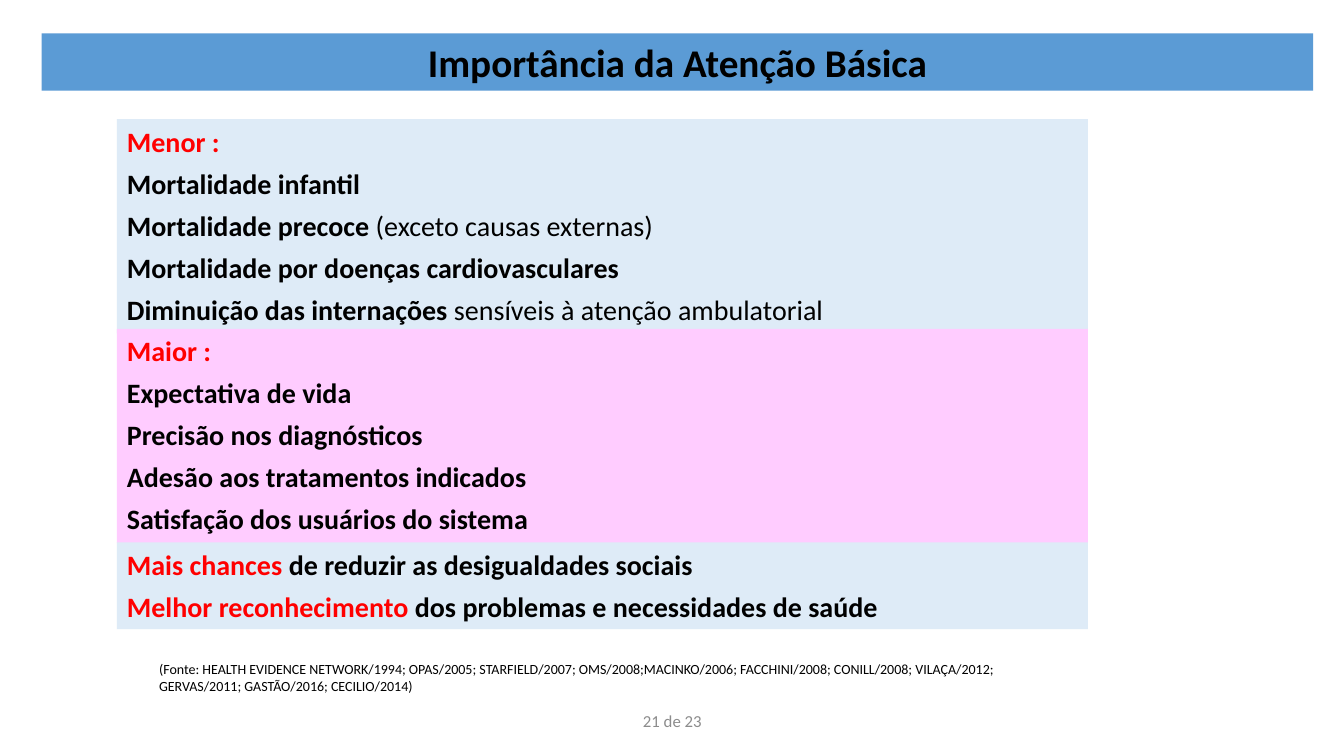
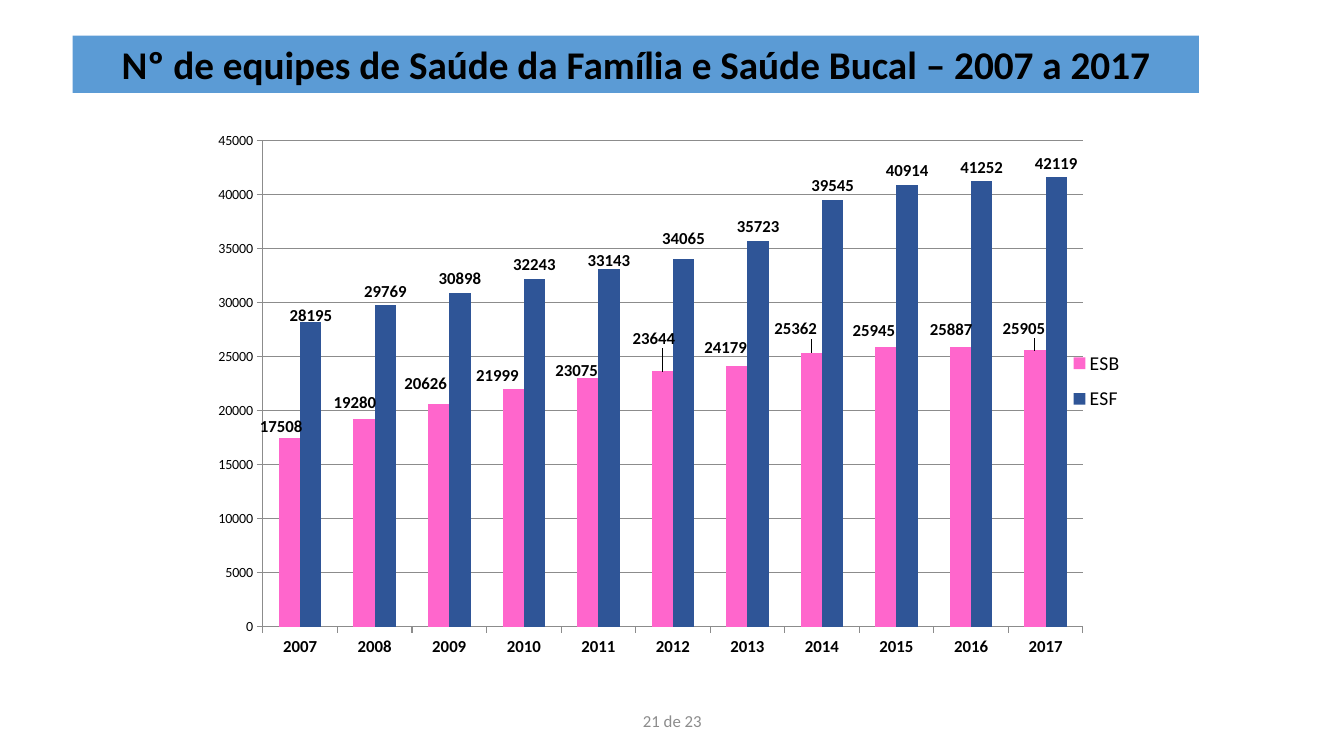
from lxml.etree import SubElement
from pptx import Presentation
from pptx.chart.data import CategoryChartData as ChartData
from pptx.dml.color import RGBColor
from pptx.enum.chart import XL_CHART_TYPE as ChartType, XL_LABEL_POSITION as LabelPos
from pptx.enum.chart import XL_LEGEND_POSITION as LegendPos, XL_TICK_MARK as TickMark
from pptx.enum.shapes import MSO_SHAPE as Shape
from pptx.enum.text import MSO_ANCHOR as Anchor, MSO_AUTO_SIZE as AutoSize, PP_ALIGN as Align
from pptx.oxml.ns import qn
from pptx.util import Inches, Pt

WIDTH, HEIGHT = Inches(13.33), Inches(7.5)
BLACK = RGBColor(0x00, 0x00, 0x00)
RED = RGBColor(0xFF, 0x00, 0x00)
GRAY = RGBColor(0x8C, 0x8C, 0x8C)
BAND_BLUE = RGBColor(0x5B, 0x9B, 0xD5)
PALE_BLUE = RGBColor(0xDE, 0xEB, 0xF7)
PALE_PINK = RGBColor(0xFF, 0xCC, 0xFF)
BAR_PINK = RGBColor(0xFF, 0x66, 0xCC)
BAR_BLUE = RGBColor(0x2F, 0x55, 0x97)

TITLE = {"size": Pt(28), "bold": True}
STRONG = {"size": Pt(20), "bold": True}
ALERT = {**STRONG, "color": RED}
PLAIN = {"size": Pt(20), "bold": False}
SOURCE = {"size": Pt(10)}
FOOTER = {"size": Pt(12), "color": GRAY}
CHART_TEXT = {"size": Pt(10), "bold": False}
CHART_STRONG = {"size": Pt(12), "bold": True}
LEGEND_TEXT = {"size": Pt(14), "bold": False}

PANELS = [
    (15.75, PALE_BLUE, [
        [("Menor :", ALERT)],
        [("Mortalidade infantil", STRONG)],
        [("Mortalidade precoce", STRONG), (" (exceto causas externas)", PLAIN)],
        [("Mortalidade por doenças cardiovasculares", STRONG)],
        [("Diminuição das internações ", STRONG), ("sensíveis à atenção ambulatorial", PLAIN)],
    ]),
    (43.5, PALE_PINK, [
        [("Maior :", ALERT)],
        [("Expectativa de vida", STRONG)],
        [("Precisão nos diagnósticos", STRONG)],
        [("Adesão aos tratamentos indicados", STRONG)],
        [("Satisfação dos usuários do sistema", STRONG)],
    ]),
    (71.75, PALE_BLUE, [
        [("Mais chances ", ALERT), ("de reduzir as desigualdades sociais", STRONG)],
        [("Melhor reconhecimento ", ALERT), ("dos problemas e necessidades de saúde", STRONG)],
    ]),
]
SOURCES = [
    "(Fonte: HEALTH EVIDENCE NETWORK/1994; OPAS/2005; STARFIELD/2007; OMS/2008;"
    "MACINKO/2006; FACCHINI/2008; CONILL/2008; VILAÇA/2012;",
    "GERVAS/2011; GASTÃO/2016; CECILIO/2014)",
]

YEARS = [str(year) for year in range(2007, 2018)]
TEAMS = {
    "ESB": {
        "values": [17508, 19280, 20626, 21999, 23075, 23644, 24179, 25362, 25945, 25887, 25590],
        "color": BAR_PINK,
        "last_label": "25905",
        "shifts": dict(enumerate([(-9, 5), (-10, -4), (-14, -11), (-17, 0), (-12, 13), (-9, -34),
                                  (-12, -7), (-17, -18), (-13, -4), (-10, -7), (-12, -14)])),
    },
    "ESF": {
        "values": [28195, 29769, 30898, 32243, 33143, 34065, 35723, 39545, 40914, 41252, 41619],
        "color": BAR_BLUE,
        "last_label": "42119",
        "shifts": {0: (0, 14), 4: (0, 11), 5: (0, -11), 10: (0, 0)},
    },
}


def area(left, top, width, height):
    """Turn percentages of the slide into a left, top, width and height."""
    return [int(share * side / 100) for share, side in
            zip((left, top, width, height), (WIDTH, HEIGHT) * 2)]


def style_font(font, style):
    """Apply a dict of format values to a font."""
    values = {"name": "Calibri", "color": BLACK, **style}
    font.color.rgb = values.pop("color")
    for name, value in values.items():
        setattr(font, name, value)


def write(frame, lines, align=Align.LEFT, anchor=Anchor.TOP, space_after=0):
    """Fill a text frame with lines made of styled spans."""
    settings = {"word_wrap": True, "auto_size": AutoSize.NONE, "vertical_anchor": anchor}
    for name, value in settings.items():
        setattr(frame, name, value)
    for index, line in enumerate(lines):
        para = frame.add_paragraph() if index else frame.paragraphs[0]
        para.alignment = align
        para.space_after = Pt(space_after)
        for text, style in line:
            span = para.add_run()
            span.text = text
            style_font(span.font, style)


def fill(target, color):
    """Give a shape or bar a solid fill."""
    target.fill.solid()
    target.fill.fore_color.rgb = color


def add_text(page, box_area, lines, **options):
    """Add a text box."""
    write(page.shapes.add_textbox(*box_area).text_frame, lines, **options)


def add_page(deck, title, left, top, width):
    """Add a page with its title band and page footer."""
    page = deck.slides.add_slide(deck.slide_layouts[5])
    band = page.shapes.title
    band.left, band.top, band.width, band.height = area(left, top, width, 7.6)
    fill(band, BAND_BLUE)
    write(band.text_frame, [[(title, TITLE)]], Align.CENTER)
    add_text(page, area(33.15, 92.65, 33.75, 5.35), [[("21 de 23", FOOTER)]],
             align=Align.CENTER, anchor=Anchor.MIDDLE)
    return page


def add_panel(page, top, color, lines):
    """Add a coloured panel whose height follows its number of lines."""
    box = page.shapes.add_shape(Shape.RECTANGLE, *area(8.7, top, 72.25, 5.63 * len(lines) + 0.2))
    box.shadow.inherit = False
    box.line.fill.background()
    fill(box, color)
    write(box.text_frame, lines, space_after=6)


def set_layout(parent, index, values):
    """Place a chart part by hand with the given layout values."""
    for old in parent.findall(qn("c:layout")):
        parent.remove(old)
    layout = SubElement(parent, qn("c:layout"))
    manual = SubElement(layout, qn("c:manualLayout"))
    for name, value in values.items():
        SubElement(manual, qn("c:" + name)).set("val", str(value))
    parent.insert(index, layout)


def edge_layout(x, y, w, h):
    """Return layout values measured from the chart's edges."""
    return {"xMode": "edge", "yMode": "edge", "x": x, "y": y, "w": w, "h": h}


def label_series(series, team):
    """Colour a series and set its labels, some of them moved."""
    fill(series.format, team["color"])
    labels = series.data_labels
    labels.show_value = True
    labels.position = LabelPos.OUTSIDE_END
    style_font(labels.font, CHART_STRONG)
    for index, (right, down) in team["shifts"].items():
        label = series.points[index].data_label
        if index == len(YEARS) - 1:
            span = label.text_frame.paragraphs[0].add_run()
            span.text = team["last_label"]
            style_font(span.font, CHART_STRONG)
        else:
            style_font(label.font, CHART_STRONG)
        label.position = LabelPos.OUTSIDE_END
        set_layout(label._get_or_add_dLbl(), 1, {"x": right / 1000, "y": down / 1000})


def style_axes(chart):
    """Set the scale, ticks, lines and fonts of both axes."""
    scale = chart.value_axis
    settings = {"minimum_scale": 0, "maximum_scale": 45000, "major_unit": 5000,
                "has_major_gridlines": True}
    for name, value in settings.items():
        setattr(scale, name, value)
    scale.major_gridlines.format.line.color.rgb = GRAY
    for axis, style in ((scale, CHART_TEXT), (chart.category_axis, CHART_STRONG)):
        axis.major_tick_mark = TickMark.OUTSIDE
        axis.format.line.color.rgb = GRAY
        style_font(axis.tick_labels.font, style)


def add_team_chart(page):
    """Add the column chart of teams per year."""
    data = ChartData()
    data.categories = YEARS
    for name, team in TEAMS.items():
        data.add_series(name, team["values"])
    chart = page.shapes.add_chart(ChartType.COLUMN_CLUSTERED,
                                  *area(15.45, 14.25, 68.55, 73.05), data).chart
    style_font(chart.font, CHART_TEXT)
    chart.has_title = False
    chart.has_legend = True
    legend = chart.legend
    legend.position = LegendPos.RIGHT
    legend.include_in_layout = False
    style_font(legend.font, LEGEND_TEXT)
    set_layout(legend._element, 1, edge_layout(0.94, 0.42, 0.06, 0.15))
    plot = chart.plots[0]
    for name, value in {"gap_width": 150, "overlap": 0, "vary_by_categories": False}.items():
        setattr(plot, name, value)
    style_axes(chart)
    for series in plot.series:
        label_series(series, TEAMS[series.name])
    plot_area = chart._chartSpace.find(".//" + qn("c:plotArea"))
    set_layout(plot_area, 0, {"layoutTarget": "inner", **edge_layout(0.06, 0.06, 0.89, 0.88)})


def main():
    """Build and save the deck."""
    deck = Presentation()
    deck.slide_width, deck.slide_height = WIDTH, HEIGHT
    page = add_page(deck, "Importância da Atenção Básica", 3.1, 4.4, 94.6)
    for top, color, lines in PANELS:
        add_panel(page, top, color, lines)
    add_text(page, area(11.1, 86.7, 88, 6), [[(line, SOURCE)] for line in SOURCES])
    page = add_page(deck, "Nº de equipes de Saúde da Família e Saúde Bucal – 2007 a 2017",
                    5.4, 4.7, 83.8)
    add_team_chart(page)
    deck.save("out.pptx")


if __name__ == "__main__":
    main()
